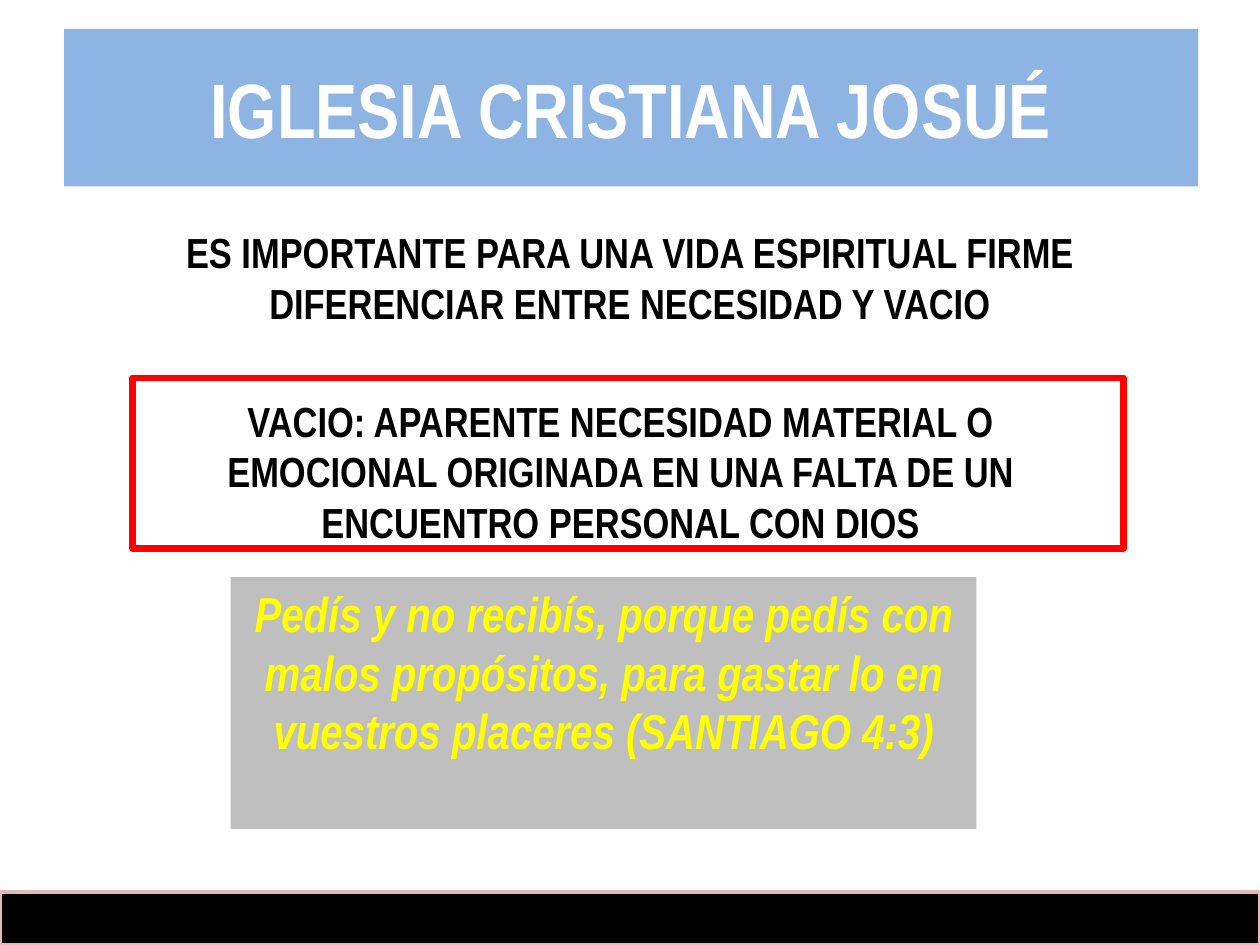
from dataclasses import dataclass
from typing import Optional

from pptx import Presentation
from pptx.dml.color import RGBColor
from pptx.enum.shapes import MSO_SHAPE as Preset
from pptx.enum.text import MSO_ANCHOR as Anchor, MSO_AUTO_SIZE as AutoSize, PP_ALIGN as Align
from pptx.util import Pt

BLACK = RGBColor(0x00, 0x00, 0x00)
WHITE = RGBColor(0xFF, 0xFF, 0xFF)
RED = RGBColor(0xFF, 0x00, 0x00)
YELLOW = RGBColor(0xFF, 0xFF, 0x00)
GRAY = RGBColor(0xBF, 0xBF, 0xBF)
SKY_BLUE = RGBColor(0x8E, 0xB4, 0xE3)
PALE_PINK = RGBColor(0xE6, 0xB9, 0xB8)
FONT = "Arial Narrow"


@dataclass(frozen=True)
class Box:
    left: float
    top: float
    width: float
    height: float

    def lengths(self) -> tuple:
        return tuple(Pt(value) for value in (self.left, self.top, self.width, self.height))


@dataclass(frozen=True)
class Panel:
    box: Box
    fill: Optional[RGBColor] = None
    line: Optional[RGBColor] = None
    line_width: float = 0


@dataclass(frozen=True)
class Statement:
    box: Box
    text: str


TITLE_BOX = Box(36.72, 16.56, 648, 90)
FOOTER = Panel(Box(0, 509.76, 720, 30.24), fill=BLACK, line=PALE_PINK, line_width=2)
FRAME = Panel(Box(75.6, 216, 566.64, 97.2), line=RED, line_width=4)
VERSE = Panel(Box(131.76, 329.76, 426.24, 144), fill=GRAY)
STATEMENTS = (
    Statement(
        Box(36, 126, 648, 65.5),
        "ES IMPORTANTE PARA UNA VIDA ESPIRITUAL FIRME DIFERENCIAR ENTRE NECESIDAD Y VACIO",
    ),
    Statement(
        Box(75.6, 222.48, 558, 65.5),
        "VACIO: APARENTE NECESIDAD MATERIAL O EMOCIONAL ORIGINADA EN UNA FALTA DE UN "
        "ENCUENTRO PERSONAL CON DIOS",
    ),
)


def write_text(shape, text: str, *, size: float, color: RGBColor,
               italic: bool = False, anchor: Anchor = Anchor.TOP) -> None:
    frame = shape.text_frame
    frame.word_wrap = True
    frame.auto_size = AutoSize.NONE
    frame.vertical_anchor = anchor
    paragraph = frame.paragraphs[0]
    paragraph.alignment = Align.CENTER
    run = paragraph.add_run()
    run.text = text
    font = run.font
    font.name = FONT
    font.size = Pt(size)
    font.bold = True
    font.italic = italic
    font.color.rgb = color


def add_panel(slide, panel: Panel):
    shape = slide.shapes.add_shape(Preset.RECTANGLE, *panel.box.lengths())
    shape.shadow.inherit = False
    if panel.fill is None:
        shape.fill.background()
    else:
        shape.fill.solid()
        shape.fill.fore_color.rgb = panel.fill
    if panel.line is None:
        shape.line.fill.background()
    else:
        shape.line.color.rgb = panel.line
        shape.line.width = Pt(panel.line_width)
    return shape


def add_title(slide, text: str) -> None:
    title = slide.shapes.title
    title.left, title.top, title.width, title.height = TITLE_BOX.lengths()
    title.fill.solid()
    title.fill.fore_color.rgb = SKY_BLUE
    write_text(title, text, size=44, color=WHITE, anchor=Anchor.MIDDLE)


def add_statement(slide, statement: Statement) -> None:
    text_box = slide.shapes.add_textbox(*statement.box.lengths())
    write_text(text_box, statement.text, size=24, color=BLACK)


def main() -> None:
    presentation = Presentation()
    presentation.slide_width, presentation.slide_height = Pt(720), Pt(540)
    slide = presentation.slides.add_slide(presentation.slide_layouts.get_by_name("Title Only"))
    add_title(slide, "IGLESIA CRISTIANA JOSUÉ")
    add_panel(slide, FOOTER)
    for statement in STATEMENTS:
        add_statement(slide, statement)
    add_panel(slide, FRAME)
    verse = add_panel(slide, VERSE)
    write_text(
        verse,
        "Pedís y no recibís, porque pedís con malos propósitos, para gastar lo en "
        "vuestros placeres (SANTIAGO 4:3)",
        size=28, color=YELLOW, italic=True,
    )
    presentation.save("out.pptx")


if __name__ == "__main__":
    main()
